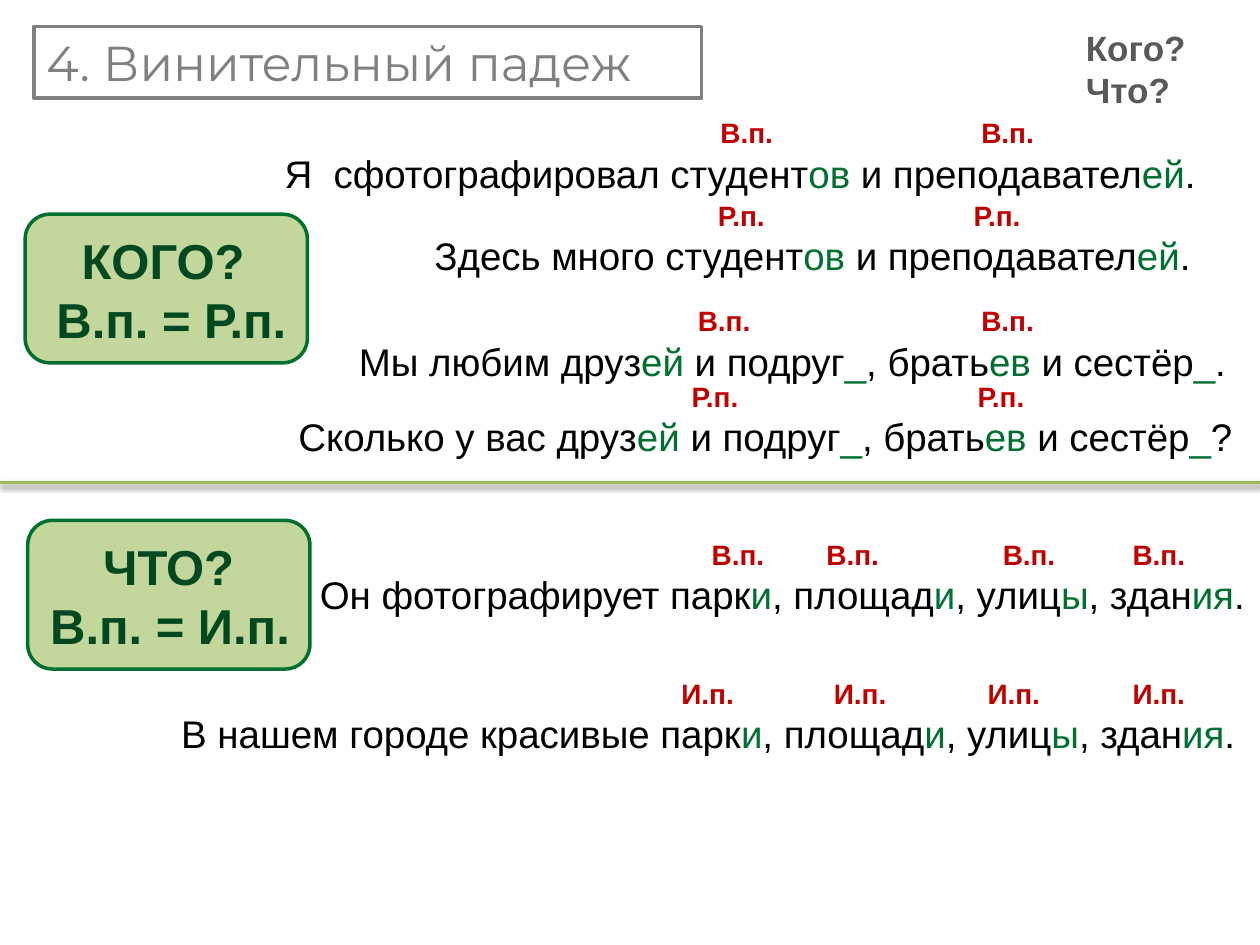
import pptx
import pptx.util
import pptx.oxml
import pptx.oxml.ns
import pptx.dml.color
import pptx.enum.shapes
import pptx.enum.text
from pptx.util import Inches

COLOURS = {
    "white": "FFFFFF", "black": "000000", "gray": "808080", "question": "595959",
    "card": "C3D69B", "ending": "007030", "card_text": "00481F",
    "case": "C00000", "divider": "9BBB59",
}
NAMESPACE = pptx.oxml.ns.nsdecls("a")


def colour(name):
    return pptx.dml.color.RGBColor.from_string(COLOURS[name])


def add_span(para, text, size, shade, bold=False, font="Arial"):
    span = para.add_run()
    span.text = text
    span.font.name = font
    span.font.size = pptx.util.Pt(size)
    span.font.bold = bold
    span.font.color.rgb = colour(shade)


def add_text_box(shapes, box, wrap):
    frame = shapes.add_textbox(*map(Inches, box)).text_frame
    frame.word_wrap = wrap
    frame.auto_size = pptx.enum.text.MSO_AUTO_SIZE.SHAPE_TO_FIT_TEXT
    return frame


def add_panel(shapes, kind, box, fill, line):
    panel = shapes.add_shape(kind, *map(Inches, box))
    panel.shadow.inherit = False
    panel.fill.solid()
    panel.fill.fore_color.rgb = colour(fill)
    panel.line.color.rgb = colour(line)
    panel.line.width = pptx.util.Pt(2)
    return panel


def add_title(page, box, text):
    panel = add_panel(page.shapes, pptx.enum.shapes.MSO_SHAPE.RECTANGLE, box, "white", "gray")
    frame = panel.text_frame
    frame.word_wrap = True
    para = frame.paragraphs[0]
    para.alignment = pptx.enum.text.PP_ALIGN.LEFT
    add_span(para, text, 28, "gray", font="Montserrat")


def add_questions(page, box, questions):
    frame = add_text_box(page.shapes, box, False)
    for index, question in enumerate(questions):
        para = frame.add_paragraph() if index else frame.paragraphs[0]
        add_span(para, question, 20, "question", True)


def add_rule_card(page, box, text_left, text_width, indent, question, rule):
    left, top, width, height = box
    shapes = page.shapes.add_group_shape().shapes
    add_panel(shapes, pptx.enum.shapes.MSO_SHAPE.ROUNDED_RECTANGLE, box, "card", "ending")
    text_box = (left + text_left, top + 0.08, text_width, 1.04)
    frame = add_text_box(shapes, text_box, False)
    para = frame.paragraphs[0]
    para._p.get_or_add_pPr().set("marL", str(Inches(indent)))
    add_span(para, question, 28, "card_text", True)
    add_span(frame.add_paragraph(), rule, 28, "card_text", True)


def set_tab_stops(para, positions):
    stops = "".join(f'<a:tab pos="{Inches(position)}" algn="l"/>' for position in positions)
    tabs = pptx.oxml.parse_xml(f"<a:tabLst {NAMESPACE}>{stops}</a:tabLst>")
    para._p.get_or_add_pPr().append(tabs)


def add_sentence(page, box, case, label_lefts, sentence, lead_size=16):
    frame = add_text_box(page.shapes, box, True)
    labels = frame.paragraphs[0]
    set_tab_stops(labels, [left - box[0] - 0.1 for left in label_lefts])
    add_span(labels, "\t", lead_size, "black")
    add_span(labels, "\t".join([case] * len(label_lefts)), 16, "case", True)
    words = frame.add_paragraph()
    for index, part in enumerate(sentence.split("|")):
        add_span(words, part, 22, "ending" if index % 2 else "black")


def add_divider(page, top):
    line = page.shapes.add_connector(
        pptx.enum.shapes.MSO_CONNECTOR.STRAIGHT, 0, Inches(top), Inches(10), Inches(top))
    line.line.color.rgb = colour("divider")
    line.line.width = pptx.util.Pt(2)
    line._element.spPr.append(pptx.oxml.parse_xml(
        f'<a:effectLst {NAMESPACE}><a:outerShdw blurRad="{pptx.util.Pt(3.1)}" '
        f'dist="{pptx.util.Pt(1.6)}" dir="5400000" rotWithShape="0">'
        f'<a:srgbClr val="{COLOURS["black"]}"><a:alpha val="38000"/></a:srgbClr>'
        '</a:outerShdw></a:effectLst>'))


def main():
    deck = pptx.Presentation()
    deck.slide_width, deck.slide_height = Inches(10), Inches(7.5)
    page = deck.slides.add_slide(deck.slide_layouts[6])

    add_title(page, (0.27, 0.21, 5.3, 0.57), "4. Винительный падеж")
    add_questions(page, (8.52, 0.16, 1, 0.77), ["Кого?", "Что?"])
    add_rule_card(page, (0.2, 1.7, 2.24, 1.18), 0.15, 2.04, 0.2, "КОГО?", "В.п. = Р.п.")
    add_rule_card(page, (0.22, 4.13, 2.24, 1.18), 0.08, 2.12, 0.42, "ЧТО?", "В.п. = И.п.")

    people = "студент|ов| и преподавател|ей|."
    family = "друз|ей| и подруг|_|, брать|ев| и сестёр|_|"
    places = "парк|и|, площад|и|, улиц|ы|, здан|ия|."
    add_sentence(page, (2.16, 0.84, 7.61, 0.77), "В.п.", [5.72, 7.79],
                 "Я  сфотографировал " + people, 18)
    add_sentence(page, (3.35, 1.53, 6.27, 0.74), "Р.п.", [5.7, 7.73],
                 "Здесь много " + people)
    add_sentence(page, (2.75, 2.33, 7.25, 0.77), "В.п.", [5.54, 7.79],
                 "Мы любим " + family + ".", 18)
    add_sentence(page, (2.27, 2.96, 7.7, 0.74), "Р.п.", [5.49, 7.76],
                 "Сколько у вас " + family + "?")
    add_sentence(page, (2.44, 4.22, 7.68, 0.74), "В.п.", [5.65, 6.56, 7.96, 8.99],
                 "Он фотографирует " + places)
    add_sentence(page, (1.34, 5.32, 8.66, 0.74), "И.п.", [5.41, 6.62, 7.84, 8.99],
                 "В нашем городе красивые " + places)
    add_divider(page, 3.83)
    deck.save("out.pptx")


if __name__ == "__main__":
    main()
